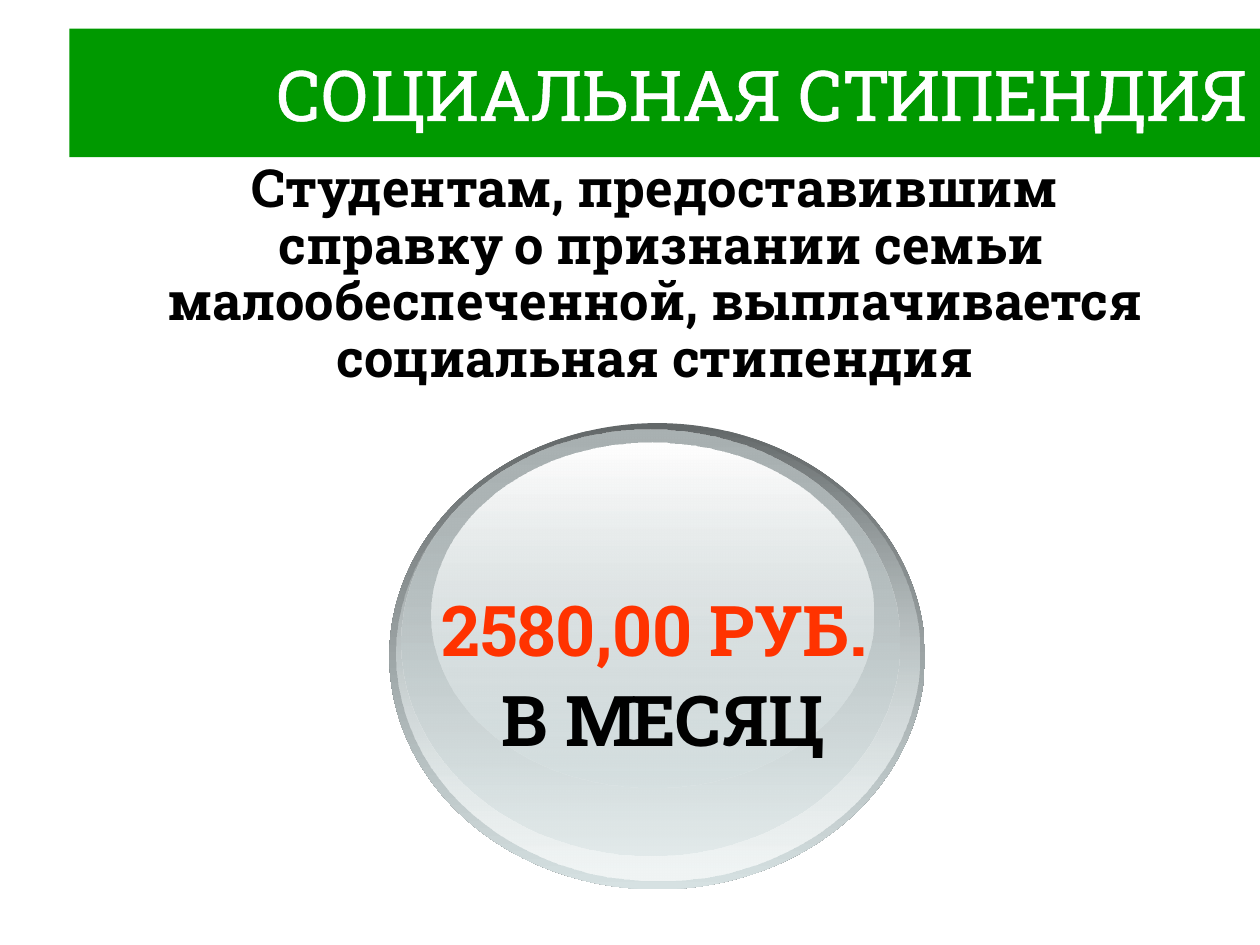
import dataclasses

import pptx
import pptx.dml.color
import pptx.enum.shapes
import pptx.enum.text
import pptx.oxml
import pptx.oxml.ns
import pptx.util
from lxml import etree

Cm = pptx.util.Cm
Pt = pptx.util.Pt
RGB = pptx.dml.color.RGBColor.from_string
SHAPE = pptx.enum.shapes.MSO_SHAPE
ALIGN = pptx.enum.text.PP_ALIGN
ANCHOR = pptx.enum.text.MSO_ANCHOR
qn = pptx.oxml.ns.qn


@dataclasses.dataclass(frozen=True)
class Theme:
    face: str = "Roboto Slab"
    green: str = "009900"
    white: str = "FFFFFF"
    black: str = "000000"
    red: str = "FF3300"
    mist: str = "D6E1E2"
    dark: str = "636869"
    steel: str = "AAB2B3"
    pale: str = "F1F5F5"
    big: int = 40
    mid: int = 30


THEME = Theme()

# Box, then top and bottom colour, each with its opacity in percent
OVALS = [
    ((7.85, 8.53, 10.8, 9.4), (THEME.dark, 100), (THEME.mist, 100)),
    ((8, 8.59, 10.54, 9.17), (THEME.mist, 0), (THEME.pale, 100)),
    ((8.1, 8.66, 10.03, 8.59), (THEME.steel, 100), (THEME.mist, 48)),
    ((8.69, 8.92, 8.92, 6.96), (THEME.white, 100), (THEME.mist, 38)),
]


def put(item, **values):
    for name, value in values.items():
        setattr(item, name, value)


def place(shape, box):
    sides = ("left", "top", "width", "height")
    put(shape, **dict(zip(sides, map(Cm, box))))


def add_plain(shapes, kind, box):
    shape = shapes.add_shape(kind, *map(Cm, box))
    shape.shadow.inherit = False
    shape.line.fill.background()
    return shape


def add_oval(shapes, box, *tones):
    """Add an oval shaded from top to bottom."""
    fill = add_plain(shapes, SHAPE.OVAL, box).fill
    fill.gradient()
    fill.gradient_angle = 270
    for stop, (tone, alpha) in zip(fill.gradient_stops, tones):
        stop.color.rgb = RGB(tone)
        if alpha < 100:
            node = next(fill_node for fill_node in stop._gs)
            etree.SubElement(node, qn("a:alpha"), val=str(alpha * 1000))


def write(shape, lines, size, align, anchor, bold=False, gap=0, pitch=0.9):
    """Fill a text shape with (text, colour) lines."""
    frame = shape.text_frame
    put(frame, word_wrap=True, vertical_anchor=anchor,
        auto_size=pptx.enum.text.MSO_AUTO_SIZE.NONE)
    for i, (text, tone) in enumerate(lines):
        para = frame.add_paragraph() if i else frame.paragraphs[0]
        put(para, alignment=align, line_spacing=pitch,
            space_before=Pt(gap if i else 0))
        run = para.add_run()
        run.text = text
        put(run.font, name=THEME.face, size=Pt(size), bold=bold)
        run.font.color.rgb = RGB(tone)


def outline(run, tone, width):
    """Draw a line around the letters of a run."""
    line = etree.Element(qn("a:ln"), w=str(Pt(width)))
    fill = etree.SubElement(line, qn("a:solidFill"))
    etree.SubElement(fill, qn("a:srgbClr"), val=tone)
    run.font._element.insert(0, line)


def add_head(slide):
    band = add_plain(slide.shapes, SHAPE.RECTANGLE, (1.4, 0.58, 24, 2.59))
    band.fill.solid()
    band.fill.fore_color.rgb = RGB(THEME.green)
    title = slide.shapes.title
    place(title, (0.41, 0.58, 24.99, 2.59))
    write(title, [("СОЦИАЛЬНАЯ СТИПЕНДИЯ", THEME.white)], THEME.big,
          ALIGN.RIGHT, ANCHOR.MIDDLE, pitch=1.0)
    outline(title.text_frame.paragraphs[0].runs[0], THEME.white, 1.45)
    band._element.addnext(title._element)


def add_text(slide, box, *args, **style):
    write(slide.shapes.add_textbox(*map(Cm, box)), *args, **style)


def main():
    deck = pptx.Presentation()
    put(deck, slide_width=Cm(25.4), slide_height=Cm(19.05))
    slide = deck.slides.add_slide(deck.slide_layouts[5])
    add_head(slide)
    disc = slide.shapes.add_group_shape()
    for oval in OVALS:
        add_oval(disc.shapes, *oval)
    add_text(slide, (7.47, 11.89, 11.79, 4.8),
             [("2580,00 РУБ. ", THEME.red), ("В МЕСЯЦ", THEME.black)],
             THEME.big, ALIGN.CENTER, ANCHOR.TOP, bold=True, gap=8)
    add_text(slide, (1.4, 3.18, 23.62, 4.75),
             [("Студентам, предоставившим", THEME.black),
              (" справку о признании семьи малообеспеченной, "
               "выплачивается социальная стипендия", THEME.black)],
             THEME.mid, ALIGN.CENTER, ANCHOR.MIDDLE, bold=True)
    deck.save("out.pptx")


if __name__ == "__main__":
    main()
